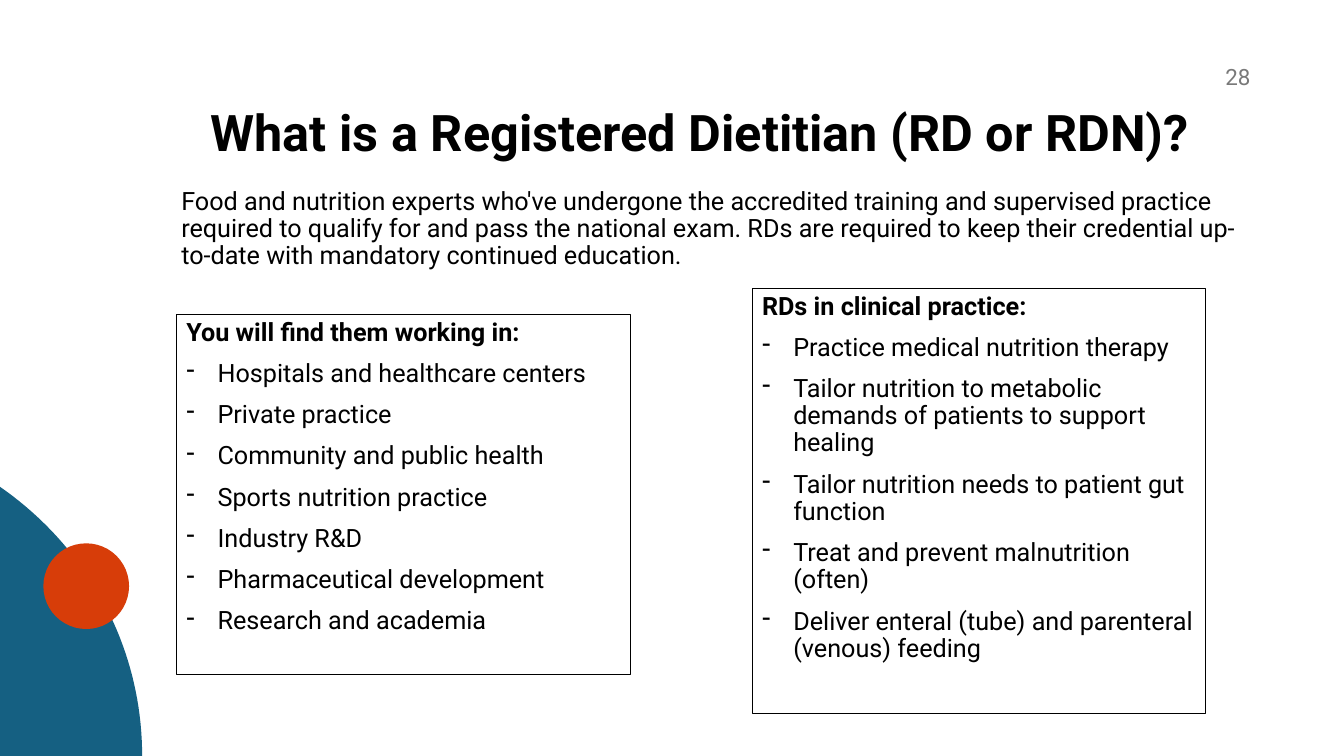
"""Build the slide that explains what a Registered Dietitian is."""
import lxml.etree
import pptx
import pptx.dml.color
import pptx.enum.shapes
import pptx.enum.text
import pptx.oxml.ns
import pptx.util

Inches, Pt = pptx.util.Inches, pptx.util.Pt
ANCHOR, ALIGN = pptx.enum.text.MSO_ANCHOR, pptx.enum.text.PP_ALIGN
SHAPE = pptx.enum.shapes.MSO_SHAPE

NUMBER = "28"
TITLE = "What is a Registered Dietitian (RD or RDN)?"
INTRO = ("Food and nutrition experts who've undergone the accredited training and "
         "supervised practice required to qualify for and pass the national exam. "
         "RDs are required to keep their credential up-to-date with mandatory "
         "continued education.")
LISTS = [
    ((1.75, 3.12, 4.5, 3.57), "You will find them working in:", [
        "Hospitals and healthcare centers",
        "Private practice",
        "Community and public health",
        "Sports nutrition practice",
        "Industry R&D",
        "Pharmaceutical development",
        "Research and academia",
    ]),
    ((7.46, 2.86, 4.5, 4.22), "RDs in clinical practice:", [
        "Practice medical nutrition therapy",
        "Tailor nutrition to metabolic demands of patients to support healing",
        "Tailor nutrition needs to patient gut function",
        "Treat and prevent malnutrition (often)",
        "Deliver enteral (tube) and parenteral (venous) feeding",
    ]),
]
ARC = [(0, 4.83), (0.85, 5.42), (1.41, 6.39), (1.41, 7.5)]
ARC_STEPS = 40
DOT = (0.43, 5.39, 0.85, 0.85)
FONT, BLACK, GREY, BLUE, ORANGE = "Roboto", "000000", "797979", "156082", "D73D09"


def color(hex_text):
    return pptx.dml.color.RGBColor.from_string(hex_text)


def curve_point(t):
    weights = ((1 - t) ** 3, 3 * t * (1 - t) ** 2, 3 * t * t * (1 - t), t ** 3)
    return tuple(Inches(sum(w * p[axis] for w, p in zip(weights, ARC))) for axis in (0, 1))


def paint(s, fill):
    s.shadow.inherit = False
    s.fill.solid()
    s.fill.fore_color.rgb = color(fill)
    s.line.fill.background()


def add_run(p, text, size=18, bold=False, hex_text=BLACK):
    r = p.add_run()
    r.text = text
    r.font.name, r.font.size, r.font.bold = FONT, Pt(size), bold
    r.font.color.rgb = color(hex_text)


def space(p):
    p.alignment = ALIGN.LEFT
    p.line_spacing = 0.9
    p.space_before = Pt(10)


def add_dash(p):
    pPr = p._p.get_or_add_pPr()
    pPr.set("marL", str(Inches(0.31)))
    pPr.set("indent", str(-Inches(0.31)))
    lxml.etree.SubElement(pPr, pptx.oxml.ns.qn("a:buChar")).set("char", "-")


def add_text(box, anchor, inset):
    tf = slide.shapes.add_textbox(*map(Inches, box)).text_frame
    tf.word_wrap = True
    tf.vertical_anchor = anchor
    tf.margin_top = tf.margin_bottom = Inches(inset)
    return tf.paragraphs[0]


def add_list(box, heading, items):
    s = slide.shapes.add_shape(SHAPE.RECTANGLE, *map(Inches, box))
    s.shadow.inherit = False
    s.fill.background()
    s.line.color.rgb = color(BLACK)
    s.line.width = Pt(0.75)
    tf = s.text_frame
    tf.word_wrap = True
    tf.vertical_anchor = ANCHOR.TOP
    p = tf.paragraphs[0]
    space(p)
    add_run(p, heading, bold=True)
    for item in items:
        p = tf.add_paragraph()
        space(p)
        add_dash(p)
        add_run(p, item)


prs = pptx.Presentation()
prs.slide_width, prs.slide_height = Inches(13.33), Inches(7.5)
slide = prs.slides.add_slide(prs.slide_layouts[6])

arc = [curve_point(i / ARC_STEPS) for i in range(ARC_STEPS + 1)]
builder = slide.shapes.build_freeform(*arc[0])
builder.add_line_segments(arc[1:] + [(0, Inches(7.5))], close=True)
paint(builder.convert_to_shape(), BLUE)
paint(slide.shapes.add_shape(SHAPE.OVAL, *map(Inches, DOT)), ORANGE)

p = add_text((11.42, 0.5, 1.08, 0.52), ANCHOR.MIDDLE, 0.05)
p.alignment = ALIGN.RIGHT
add_run(p, NUMBER, size=16, hex_text=GREY)

p = add_text((1.7, 1.87, 10.8, 0.99), ANCHOR.TOP, 0)
space(p)
add_run(p, INTRO)

p = add_text((1.99, 0.76, 10.65, 1.09), ANCHOR.MIDDLE, 0)
add_run(p, TITLE, size=36, bold=True)

for box, heading, items in LISTS:
    add_list(box, heading, items)

prs.save("out.pptx")
